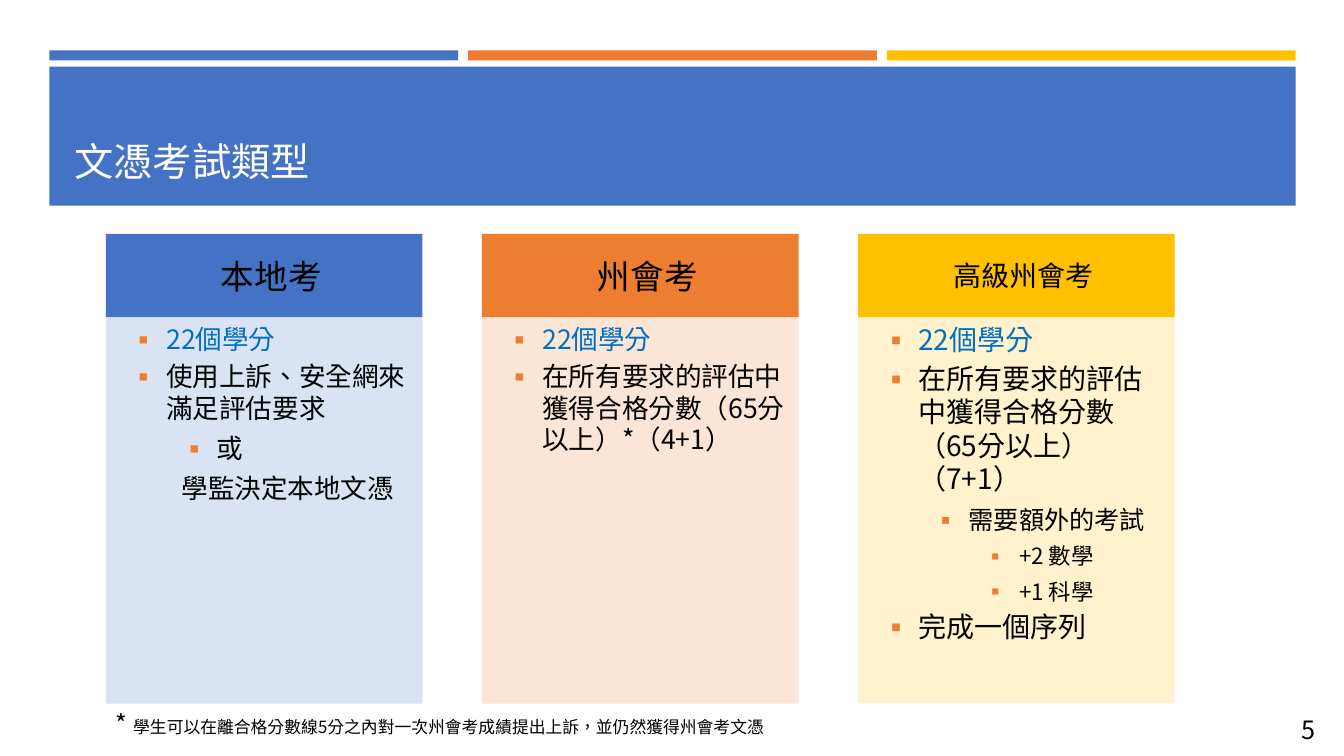
import pptx
import pptx.util
import pptx.dml.color
import pptx.enum.text
import pptx.enum.shapes
import pptx.oxml.ns
import lxml.etree

FONT = "Noto Sans CJK TC"
BLUE, ORANGE, GOLD = "4472C4", "ED7D31", "FFC000"
BLACK, WHITE, LINK = "000000", "FFFFFF", "0070C0"
ANCHOR = pptx.enum.text.MSO_ANCHOR
ALIGN = pptx.enum.text.PP_ALIGN
INDENTS = {0: (0.5, -0.36), 1: (1, -0.35), 2: (1.5, -0.34)}

COLUMNS = [
    ("本地考", 24, BLUE, "DAE3F3", [
        (0, True, "22個學分", 19, LINK),
        (0, True, "使用上訴、安全網來滿足評估要求", 19, BLACK),
        (1, True, "或", 19, BLACK),
        (1, False, "學監決定本地文憑", 19, BLACK)]),
    ("州會考", 24, ORANGE, "FBE5D6", [
        (0, True, "22個學分", 19, LINK),
        (0, True, "在所有要求的評估中獲得合格分數（65分以上）*（4+1）", 19, BLACK)]),
    ("高級州會考", 20, GOLD, "FFF2CC", [
        (0, True, "22個學分", 20, LINK),
        (0, True, "在所有要求的評估中獲得合格分數（65分以上）（7+1）", 20, BLACK),
        (1, True, "需要額外的考試", 18, BLACK),
        (2, True, "+2 數學", 16, BLACK),
        (2, True, "+1 科學", 16, BLACK),
        (0, True, "完成一個序列", 20, BLACK)]),
]


def rgb(value):
    return pptx.dml.color.RGBColor.from_string(value)


def place(sp, box):
    sp.left, sp.top, sp.width, sp.height = [pptx.util.Inches(v) for v in box]


def fill(sp, color):
    sp.fill.solid()
    sp.fill.fore_color.rgb = rgb(color)
    sp.line.fill.background()


def add_rect(s, box, color):
    sp = s.shapes.add_shape(pptx.enum.shapes.MSO_SHAPE.RECTANGLE,
                            *[pptx.util.Inches(v) for v in box])
    sp.shadow.inherit = False
    fill(sp, color)
    return sp


def frame(sp, anchor):
    tf = sp.text_frame
    tf.word_wrap = True
    tf.auto_size = pptx.enum.text.MSO_AUTO_SIZE.NONE
    tf.vertical_anchor = anchor
    return tf


def add_run(p, text, size, color):
    r = p.add_run()
    r.text = text
    r.font.size = pptx.util.Pt(size)
    r.font.name = FONT
    r.font.bold = False
    r.font.color.rgb = rgb(color)
    rPr = r.font._element
    rPr.set("lang", "zh-TW")
    latin = rPr.find(pptx.oxml.ns.qn("a:latin"))
    ea = lxml.etree.Element(pptx.oxml.ns.qn("a:ea"), typeface=FONT)
    latin.addnext(ea)


def format_paragraph(p, left, hang, before, align=ALIGN.LEFT, bullet=False):
    p.alignment = align
    p.space_before = pptx.util.Pt(before)
    pPr = p._p.get_or_add_pPr()
    pPr.set("marL", str(pptx.util.Inches(left)))
    pPr.set("indent", str(pptx.util.Inches(hang)))
    qn = pptx.oxml.ns.qn
    if bullet:
        clr = lxml.etree.SubElement(pPr, qn("a:buClr"))
        lxml.etree.SubElement(clr, qn("a:srgbClr"), val=ORANGE)
        lxml.etree.SubElement(pPr, qn("a:buFont"), typeface=FONT)
        lxml.etree.SubElement(pPr, qn("a:buChar"), char="▪")
    else:
        lxml.etree.SubElement(pPr, qn("a:buNone"))


def add_banner(s, x, y, width):
    gap = 0.1
    stripe = (width - 2 * gap) / 3
    for i, color in enumerate((BLUE, ORANGE, GOLD)):
        add_rect(s, (x + i * (stripe + gap), y, stripe, 0.1), color)
    band = add_rect(s, (x, y + 0.16, width, 1.38), BLUE)
    title = s.shapes.title
    place(title, (x + 0.15, y + 0.3, width - 0.3, 1.08))
    band._element.getparent().append(title._element)
    p = frame(title, ANCHOR.BOTTOM).paragraphs[0]
    p.alignment = ALIGN.LEFT
    add_run(p, "文憑考試類型", 28, WHITE)


def add_column(s, box, column, holders):
    x, y, w, h = box
    heading, size, dark, light, items = column
    head_h = 0.83
    parts = [((x, y, w, head_h), dark), ((x, y + head_h, w, h - head_h), light)]
    shapes = []
    for i, (part, color) in enumerate(parts):
        if holders:
            sp = s.placeholders[holders[i]]
            place(sp, part)
            fill(sp, color)
        else:
            sp = add_rect(s, part, color)
        shapes.append(sp)

    p = frame(shapes[0], ANCHOR.MIDDLE).paragraphs[0]
    format_paragraph(p, 0.14, 0, 0, ALIGN.CENTER)
    add_run(p, heading, size, BLACK)

    tf = frame(shapes[1], ANCHOR.TOP)
    for i, (level, bullet, text, size, color) in enumerate(items):
        p = tf.add_paragraph() if i else tf.paragraphs[0]
        p.level = level
        left, hang = INDENTS[level] if bullet else (0.65, 0)
        before = 0 if i == 0 else 6 if level else 3.6
        format_paragraph(p, left, hang, before, bullet=bullet)
        add_run(p, text, size, color)


def add_note(s, box, runs, align):
    sp = s.shapes.add_textbox(*[pptx.util.Inches(v) for v in box])
    p = frame(sp, ANCHOR.TOP).paragraphs[0]
    p.alignment = align
    for text, size in runs:
        add_run(p, text, size, BLACK)


def main():
    prs = pptx.Presentation()
    prs.slide_width = pptx.util.Inches(13.33)
    prs.slide_height = pptx.util.Inches(7.5)
    s = prs.slides.add_slide(prs.slide_layouts.get_by_name("Comparison"))
    add_banner(s, 0.49, 0.5, 12.36)
    for i, (column, holders) in enumerate(zip(COLUMNS, ((1, 2), (3, 4), None))):
        add_column(s, (1.05 + i * 3.73, 2.32, 3.14, 4.66), column, holders)
    footnote = "學生可以在離合格分數線5分之內對一次州會考成績提出上訴，並仍然獲得州會考文憑"
    add_note(s, (1.05, 6.98, 6.69, 0.4), [("* ", 18), (footnote, 12)], ALIGN.LEFT)
    add_note(s, (12.63, 7.04, 0.7, 0.4), [("5", 18)], ALIGN.CENTER)
    prs.save("out.pptx")


if __name__ == "__main__":
    main()
